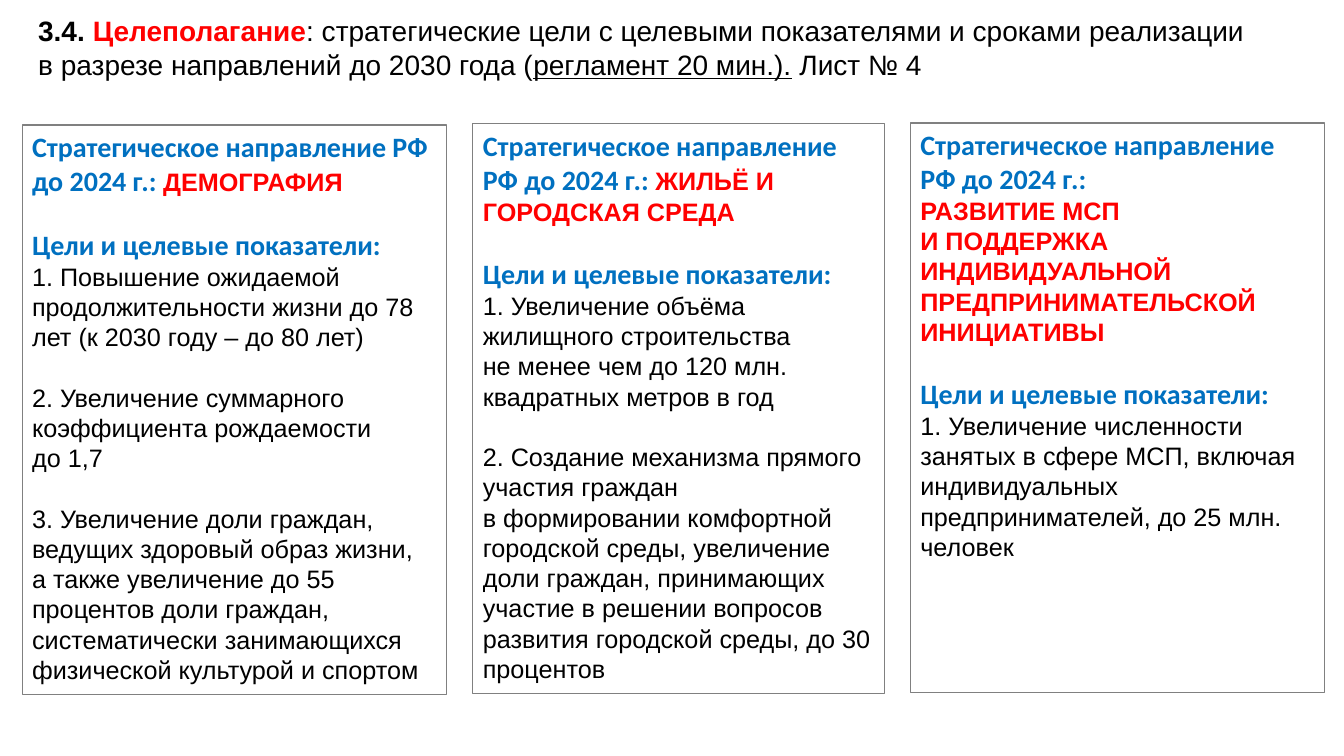
from pptx import Presentation
from pptx.dml.color import RGBColor
from pptx.enum.shapes import MSO_SHAPE
from pptx.enum.text import MSO_ANCHOR, MSO_AUTO_SIZE, PP_ALIGN
from pptx.util import Pt

PX = 9144  # 100 px to the inch
BLACK = RGBColor(0, 0, 0)
RED = RGBColor(255, 0, 0)
BLUE = RGBColor(0, 112, 192)
GRAY = RGBColor(128, 128, 128)
GAP = Pt(21.6)

# "~" stands for a no-break space
HEAD = "Стратегическое направление РФ до 2024 г.:"
GOALS = "Цели и~целевые показатели:"
CARDS = [
    ((469, 123, 408, 565), [HEAD + " ", "ЖИЛЬЁ И ГОРОДСКАЯ СРЕДА"], [
        "1. Увеличение объёма жилищного строительства не~менее чем до~120 млн. "
        "квадратных метров в~год",
        "2. Создание механизма прямого участия граждан в~формировании комфортной "
        "городской среды, увеличение доли граждан, принимающих участие в~решении "
        "вопросов развития городской среды, до~30 процентов"]),
    ((22, 124, 421, 565), [HEAD + " ", "ДЕМОГРАФИЯ"], [
        "1. Повышение ожидаемой продолжительности жизни до~78 лет "
        "(к~2030~году~– до~80 лет)",
        "2. Увеличение суммарного коэффициента рождаемости до~1,7",
        "3. Увеличение доли граждан, ведущих здоровый образ жизни, а~также "
        "увеличение до~55 процентов доли граждан, систематически занимающихся "
        "физической культурой и~спортом"]),
    ((903, 122, 411, 565),
     [HEAD, None, "РАЗВИТИЕ МСП И~ПОДДЕРЖКА ИНДИВИДУАЛЬНОЙ "
      "ПРЕДПРИНИМАТЕЛЬСКОЙ ИНИЦИАТИВЫ"], [
        "1. Увеличение численности занятых в~сфере МСП, включая индивидуальных "
        "предпринимателей, до~25 млн. человек"]),
]


def style(font, size, name, color, bold=False):
    font.size, font.name, font.bold = Pt(size), name, bold
    font.color.rgb = color


def add_run(para, text):
    run = para.add_run()
    run.text = text.replace("~", chr(160))
    return run


def add_title(slide, box):
    frame = slide.shapes.add_textbox(*(n * PX for n in box)).text_frame
    frame.word_wrap = True
    frame.vertical_anchor = MSO_ANCHOR.MIDDLE
    first, second = frame.paragraphs[0], frame.add_paragraph()
    for para in (first, second):
        para.alignment = PP_ALIGN.JUSTIFY
        style(para.font, 20, "Arial", BLACK)
    add_run(first, "3.4. ").font.bold = True
    topic = add_run(first, "Целеполагание").font
    topic.bold, topic.color.rgb = True, RED
    add_run(first, ": стратегические цели с целевыми показателями и сроками реализации ")
    add_run(second, "в разрезе направлений до 2030 года (")
    add_run(second, "регламент 20 мин.).").font.underline = True
    add_run(second, " Лист № 4")


def add_card(slide, box, heads, goals):
    card = slide.shapes.add_shape(MSO_SHAPE.RECTANGLE, *(n * PX for n in box))
    card.shadow.inherit = False
    card.fill.background()
    card.line.color.rgb = GRAY
    card.line.width = Pt(0.75)
    frame = card.text_frame
    frame.word_wrap = True
    frame.auto_size = MSO_AUTO_SIZE.SHAPE_TO_FIT_TEXT
    frame.vertical_anchor = MSO_ANCHOR.TOP

    para = frame.paragraphs[0]
    para.alignment = PP_ALIGN.LEFT
    for text in heads:
        if text is None:
            para = frame.add_paragraph()
            para.alignment = PP_ALIGN.LEFT
        elif text.startswith(HEAD):
            style(add_run(para, text).font, 20, "Calibri", BLUE, True)
        else:
            style(add_run(para, text).font, 18, "Arial", RED, True)

    for i, text in enumerate([GOALS] + goals):
        para = frame.add_paragraph()
        para.alignment = PP_ALIGN.LEFT
        if i != 1:
            para.space_before = GAP
        if i == 0:
            style(para.font, 20, "Calibri", BLUE, True)
        else:
            style(para.font, 18, "Arial", BLACK)
        add_run(para, text)


def main():
    deck = Presentation()
    deck.slide_width, deck.slide_height = 1333 * PX, 750 * PX
    slide = deck.slides.add_slide(deck.slide_layouts[6])
    add_title(slide, (28, 12, 1289, 70))
    for box, heads, goals in CARDS:
        add_card(slide, box, heads, goals)
    deck.save("out.pptx")


if __name__ == "__main__":
    main()
